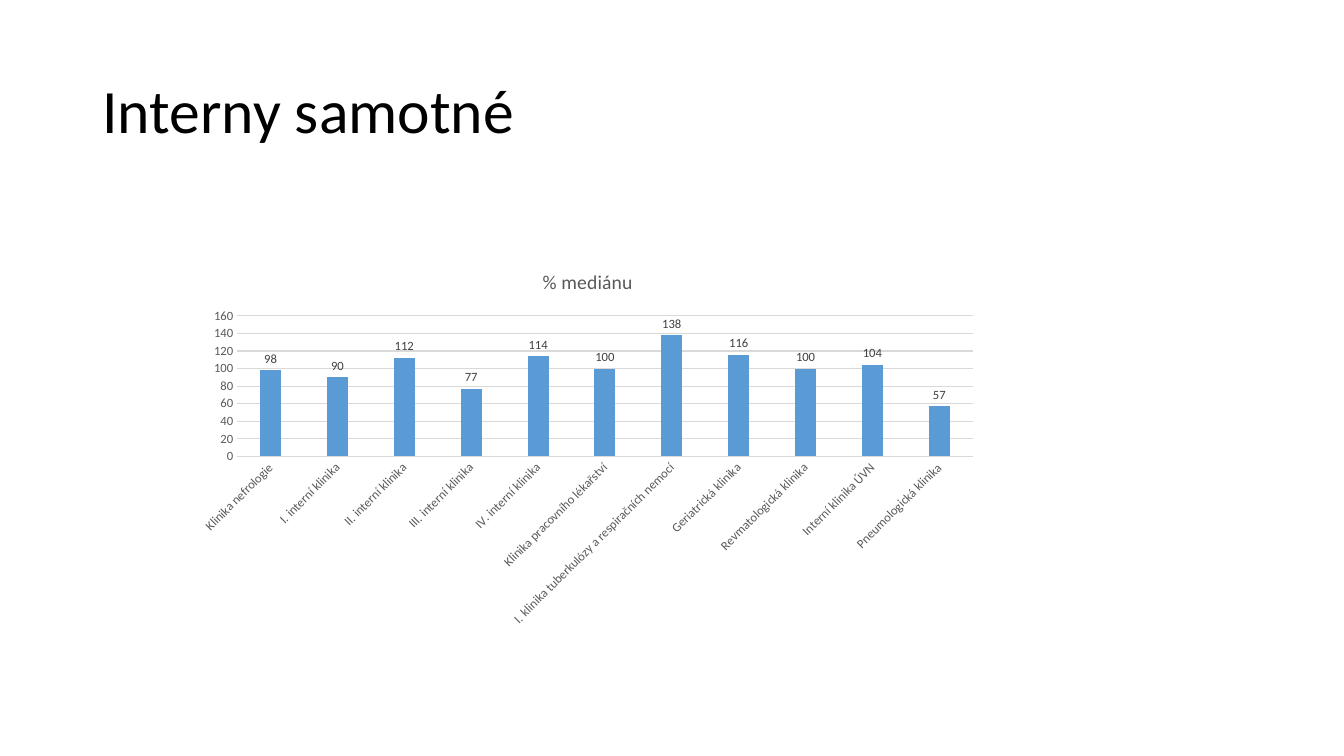
from dataclasses import dataclass

from pptx import Presentation
from pptx.chart.data import CategoryChartData
from pptx.dml.color import RGBColor
from pptx.enum.chart import XL_CHART_TYPE, XL_LABEL_POSITION, XL_TICK_MARK
from pptx.enum.text import MSO_ANCHOR, MSO_AUTO_SIZE, PP_ALIGN
from pptx.util import Cm, Pt


@dataclass(frozen=True)
class Theme:
    font: str = "Calibri"
    black: str = "000000"
    label: str = "404040"
    axis: str = "595959"
    grid: str = "D9D9D9"
    bar: str = "5B9BD5"
    heading_size: int = 44
    chart_title_size: int = 14
    chart_size: int = 10
    axis_size: int = 9


THEME = Theme()

MEDIAN_PERCENT = {
    "Klinika nefrologie": 98,
    "I. interní klinika": 90,
    "II. interní klinika": 112,
    "III. interní klinika": 77,
    "IV. interní klinika": 114,
    "Klinika pracovního lékařství": 100,
    "I. klinika tuberkulózy a respiračních nemocí": 138,
    "Geriatrická klinika": 116,
    "Revmatologická klinika": 100,
    "Interní klinika ÚVN": 104,
    "Pneumologická klinika": 57,
}


def apply_format(target, **values):
    for attribute, value in values.items():
        setattr(target, attribute, value)


def style_font(font, size, color):
    apply_format(font, name=THEME.font, size=Pt(size), bold=False)
    font.color.rgb = RGBColor.from_string(color)


def style_line(line, color):
    line.color.rgb = RGBColor.from_string(color)
    line.width = Pt(0.75)


def add_heading(slide, text):
    heading = slide.shapes.title
    apply_format(heading, left=Cm(2.33), top=Cm(1.01), width=Cm(29.21), height=Cm(3.68))
    frame = heading.text_frame
    frame.text = text
    apply_format(frame, vertical_anchor=MSO_ANCHOR.MIDDLE, word_wrap=True,
                 auto_size=MSO_AUTO_SIZE.NONE)
    paragraph = frame.paragraphs[0]
    apply_format(paragraph, alignment=PP_ALIGN.LEFT, line_spacing=0.9)
    style_font(paragraph.runs[0].font, THEME.heading_size, THEME.black)


def style_axis(axis, **values):
    apply_format(axis, major_tick_mark=XL_TICK_MARK.NONE,
                 minor_tick_mark=XL_TICK_MARK.NONE, **values)
    style_font(axis.tick_labels.font, THEME.axis_size, THEME.axis)


def style_bars(plot):
    apply_format(plot, gap_width=219, overlap=-27, vary_by_categories=False)
    bars = plot.series[0]
    bars.format.fill.solid()
    bars.format.fill.fore_color.rgb = RGBColor.from_string(THEME.bar)
    apply_format(bars.data_labels, show_value=True, number_format="#,##0",
                 number_format_is_linked=False, position=XL_LABEL_POSITION.OUTSIDE_END)
    style_font(bars.data_labels.font, THEME.axis_size, THEME.label)


def add_median_chart(slide, title, percentages):
    data = CategoryChartData(number_format="#,##0")
    data.categories = list(percentages)
    data.add_series(title, list(percentages.values()))
    chart = slide.shapes.add_chart(
        XL_CHART_TYPE.COLUMN_CLUSTERED,
        Cm(4.7), Cm(6.35), Cm(20.22), Cm(9.63), data).chart
    style_font(chart.font, THEME.chart_size, THEME.black)
    chart.has_legend = False

    # Chart title
    chart.has_title = True
    chart.chart_title.include_in_layout = False
    chart.chart_title.text_frame.text = title
    title_run = chart.chart_title.text_frame.paragraphs[0].runs[0]
    style_font(title_run.font, THEME.chart_title_size, THEME.axis)

    # Clinic names, slanted by 45 degrees
    clinics = chart.category_axis
    style_axis(clinics, has_major_gridlines=False)
    style_line(clinics.format.line, THEME.grid)
    text_properties = clinics._element.txPr
    text_properties.bodyPr.set("rot", "-2700000")
    text_properties.bodyPr.set("vert", "horz")

    # Percentage scale
    scale = chart.value_axis
    style_axis(scale, has_major_gridlines=True, minimum_scale=0, maximum_scale=160,
               major_unit=20)
    apply_format(scale.tick_labels, number_format="#,##0", number_format_is_linked=False)
    scale.format.line.fill.background()
    style_line(scale.major_gridlines.format.line, THEME.grid)

    style_bars(chart.plots[0])


def main():
    deck = Presentation()
    apply_format(deck, slide_width=Cm(33.87), slide_height=Cm(19.05))
    title_only = deck.slide_layouts[5]
    slide = deck.slides.add_slide(title_only)
    add_heading(slide, "Interny samotné")
    add_median_chart(slide, "% mediánu", MEDIAN_PERCENT)
    deck.save("out.pptx")


if __name__ == "__main__":
    main()
